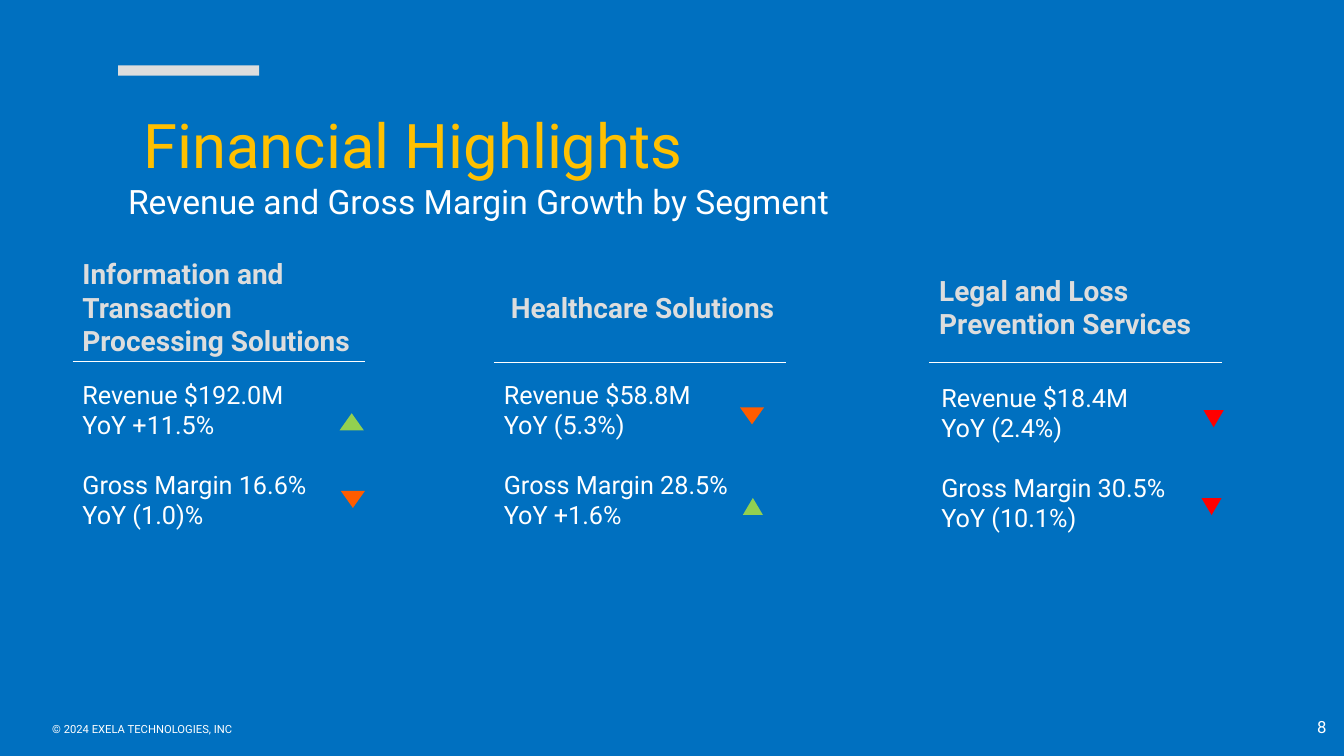
"""Build the segment revenue and gross margin slide."""
import dataclasses

import pptx
import pptx.dml.color
import pptx.enum.shapes
import pptx.enum.text
import pptx.oxml
import pptx.util

Pt = pptx.util.Pt
Shape = pptx.enum.shapes.MSO_SHAPE
Anchor = pptx.enum.text.MSO_ANCHOR
Align = pptx.enum.text.PP_ALIGN


@dataclasses.dataclass(frozen=True)
class Theme:
    font: str = "Roboto"
    back: str = "0070C0"
    white: str = "FFFFFF"
    gold: str = "FFC000"
    grey: str = "DDDDDD"
    green: str = "92D050"
    orange: str = "FF5C00"
    red: str = "FF0000"
    title: int = 44
    sub: int = 24
    head: int = 20
    body: int = 18
    page: int = 12
    foot: int = 8


class Deck:
    def __init__(self, theme):
        self.theme = theme
        self.file = pptx.Presentation()
        self.file.slide_width, self.file.slide_height = Pt(960), Pt(540)
        self.slide = self.file.slides.add_slide(self.file.slide_layouts[6])
        self.paint(self.slide.background.fill, theme.back)

    def paint(self, fill, color):
        fill.solid()
        fill.fore_color.rgb = pptx.dml.color.RGBColor.from_string(color)

    def text(self, box, lines, size, color, bold=False, anchor=Anchor.TOP, align=Align.LEFT):
        frame = self.slide.shapes.add_textbox(*map(Pt, box)).text_frame
        frame.word_wrap = True
        frame.vertical_anchor = anchor
        frame.text = "\n".join(lines)
        for para in frame.paragraphs:
            para.alignment = align
            self.style(para, size, color, bold)
        return frame.paragraphs

    def style(self, para, size, color, bold=False):
        font = para.font
        font.name, font.size, font.bold = self.theme.font, Pt(size), bold
        self.paint(font.fill, color)

    def shape(self, kind, box, color, turn=0):
        item = self.slide.shapes.add_shape(kind, *map(Pt, box))
        item.shadow.inherit = False
        self.paint(item.fill, color)
        item.line.fill.background()
        item.rotation = turn

    def rule(self, left, top, width):
        line = self.slide.shapes.add_connector(
            pptx.enum.shapes.MSO_CONNECTOR.STRAIGHT, *map(Pt, (left, top, left + width, top)))
        line.line.width = Pt(0.5)
        self.paint(line.line.fill, self.theme.white)
        line._element.spPr.append(pptx.oxml.parse_xml(
            '<a:effectLst xmlns:a="http://schemas.openxmlformats.org/drawingml/2006/main"/>'))

    def mark(self, left, top, width, color, down):
        self.shape(Shape.ISOSCELES_TRIANGLE, (left, top, width, 12.2), color, 180 if down else 0)

    def segment(self, head, spot, rule, body, lines, marks):
        theme = self.theme
        self.text((*spot, 208.8, 2 * (219.2 - spot[1])), [head], theme.head, theme.grey,
                  True, Anchor.MIDDLE)
        self.rule(*rule, 208.8)
        paras = self.text((*body, 217, 138), lines, theme.body, theme.white)
        paras[2].space_before = Pt(21.5)
        for mark in marks:
            self.mark(*mark)


def main():
    theme = Theme()
    deck = Deck(theme)
    deck.shape(Shape.RECTANGLE, (84.4, 46.8, 100.8, 7.2), theme.grey)
    title, sub = deck.text(
        (84.4, 64.8, 840, 104.4),
        ["Financial Highlights", "Revenue and Gross Margin Growth by Segment"],
        theme.title, theme.gold, anchor=Anchor.MIDDLE)
    title._p.get_or_add_pPr().set("marL", str(Pt(11)))
    deck.style(sub, theme.sub, theme.white)

    segments = [
        ("Information and Transaction Processing Solutions",
         (51.8, 178.6), (51.8, 257.8), (51.8, 267.1),
         ["Revenue $192.0M", "YoY +11.5%", "Gross Margin 16.6%", "YoY (1.0)%"],
         [(242.6, 295.2, 17.3, theme.green, False), (243.4, 350.6, 17.3, theme.orange, True)]),
        ("Healthcare Solutions",
         (357.8, 192.2), (352.8, 258.5), (352.8, 267.1),
         ["Revenue $58.8M", "YoY (5.3%)", "Gross Margin 28.5%", "YoY +1.6%"],
         [(528.5, 290.9, 17.3, theme.orange, True), (530.6, 355.7, 14.4, theme.green, False)]),
        ("Legal and Loss Prevention Services",
         (663.8, 192.2), (663.8, 258.5), (665.3, 269.3),
         ["Revenue $18.4M", "YoY (2.4%)", "Gross Margin 30.5%", "YoY (10.1%)"],
         [(859.7, 293, 14.4, theme.red, True), (858.2, 355.7, 14.4, theme.red, True)]),
    ]
    for segment in segments:
        deck.segment(*segment)

    deck.text((30.2, 512.6, 291.6, 17.3), ["© 2024 EXELA TECHNOLOGIES, INC"],
              theme.foot, theme.white)
    deck.text((738.7, 504.7, 216, 28.8), ["8"], theme.page, theme.white,
              anchor=Anchor.MIDDLE, align=Align.RIGHT)
    deck.file.save("out.pptx")


if __name__ == "__main__":
    main()
